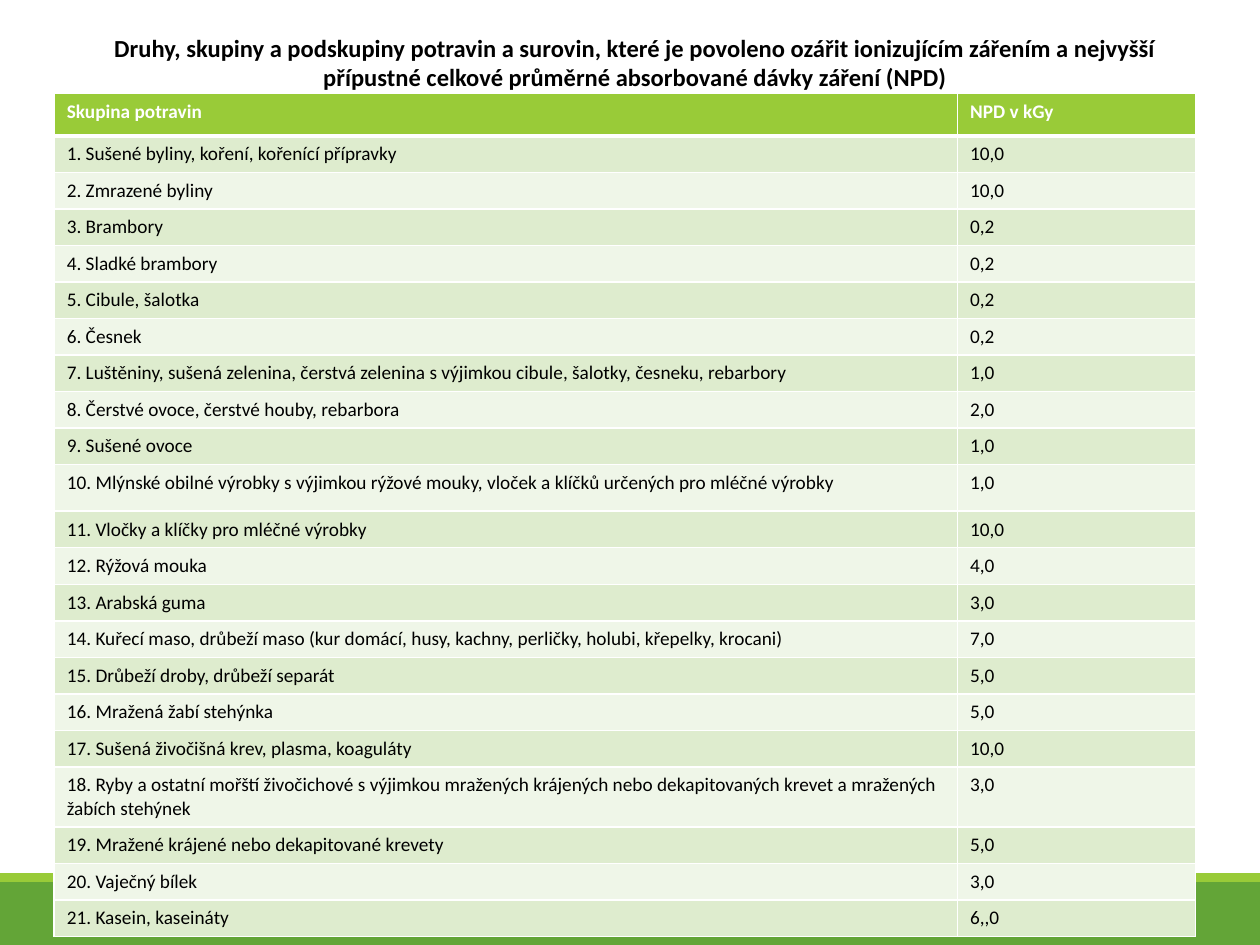
"""Build a slide listing the permitted irradiation doses for food groups."""
from lxml.etree import SubElement
from pptx import Presentation
from pptx.dml.color import RGBColor as RGB
from pptx.enum.shapes import MSO_SHAPE as SHAPE
from pptx.enum.text import MSO_ANCHOR as ANCHOR, PP_ALIGN as ALIGN
from pptx.oxml.ns import qn
from pptx.util import Inches, Pt

TITLE = ("Druhy, skupiny a podskupiny potravin a surovin, které je povoleno ozářit "
         "ionizujícím zářením a nejvyšší přípustné celkové průměrné absorbované "
         "dávky záření (NPD)")
HEADER = ("Skupina potravin", "NPD v kGy")
DOSES = [
    ("Sušené byliny, koření, kořenící přípravky", "10,0"),
    ("Zmrazené byliny", "10,0"),
    ("Brambory", "0,2"),
    ("Sladké brambory", "0,2"),
    ("Cibule, šalotka", "0,2"),
    ("Česnek", "0,2"),
    ("Luštěniny, sušená zelenina, čerstvá zelenina s výjimkou cibule, šalotky, "
     "česneku, rebarbory", "1,0"),
    ("Čerstvé ovoce, čerstvé houby, rebarbora", "2,0"),
    ("Sušené ovoce", "1,0"),
    ("Mlýnské obilné výrobky s výjimkou rýžové mouky, vloček a klíčků určených "
     "pro mléčné výrobky", "1,0"),
    ("Vločky a klíčky pro mléčné výrobky", "10,0"),
    ("Rýžová mouka", "4,0"),
    ("Arabská guma", "3,0"),
    ("Kuřecí maso, drůbeží maso (kur domácí, husy, kachny, perličky, holubi, "
     "křepelky, krocani)", "7,0"),
    ("Drůbeží droby, drůbeží separát", "5,0"),
    ("Mražená žabí stehýnka", "5,0"),
    ("Sušená živočišná krev, plasma, koaguláty", "10,0"),
    ("Ryby a ostatní mořští živočichové s výjimkou mražených krájených nebo "
     "dekapitovaných krevet a mražených žabích stehýnek", "3,0"),
    ("Mražené krájené nebo dekapitované krevety", "5,0"),
    ("Vaječný bílek", "3,0"),
    ("Kasein, kaseináty", "6,,0"),
]
COL_WIDTHS = (7.17, 1.89)
ROW_HEIGHT = 0.29
SPECIAL_HEIGHTS = {0: 0.34, 10: 0.37, 18: 0.47}
FOOTER_BANDS = [(7, 0.5, "band"), (6.93, 0.07, "accent")]
THEME = {
    "font": "Calibri", "title_size": 14, "table_size": 11,
    "band": "63A537", "accent": "99CB38", "text": "000000", "white": "FFFFFF",
    "stripes": ("EFF6E8", "DEECCE"), "rule": 1, "header_rule": 3,
}


def style(p, size, color, bold):
    f = p.font
    f.name, f.size, f.bold = THEME["font"], Pt(size), bold
    f.color.rgb = RGB.from_string(color)


def set_fill(fill, color):
    fill.solid()
    fill.fore_color.rgb = RGB.from_string(color)


def add_borders(cell, row):
    tc_pr = cell._tc.get_or_add_tcPr()
    for side in "LRTB":
        heavy = (row, side) in ((0, "B"), (1, "T"))
        width = THEME["header_rule" if heavy else "rule"]
        ln = SubElement(tc_pr, qn(f"a:ln{side}"), w=str(Pt(width)))
        SubElement(SubElement(ln, qn("a:solidFill")), qn("a:srgbClr"), val=THEME["white"])


def add_footer(s):
    for top, height, color in FOOTER_BANDS:
        sp = s.shapes.add_shape(SHAPE.RECTANGLE, 0, Inches(top), Inches(10), Inches(height))
        sp.shadow.inherit = False
        set_fill(sp.fill, THEME[color])
        sp.line.fill.background()


def add_title(s):
    sp = s.shapes.title
    sp.left, sp.top, sp.width, sp.height = map(Inches, (0.51, 0.21, 9.06, 0.57))
    tf = sp.text_frame
    tf.word_wrap, tf.vertical_anchor = True, ANCHOR.TOP
    p = tf.paragraphs[0]
    p.text, p.alignment = TITLE, ALIGN.CENTER
    style(p, THEME["title_size"], THEME["text"], True)


def add_doses(s):
    rows = [HEADER] + [(f"{n}. {name}", dose) for n, (name, dose) in enumerate(DOSES, 1)]
    heights = [SPECIAL_HEIGHTS.get(i, ROW_HEIGHT) for i in range(len(rows))]
    table = s.shapes.add_table(len(rows), len(HEADER), Inches(0.43), Inches(0.74),
                               Inches(sum(COL_WIDTHS)), Inches(sum(heights))).table
    for column, width in zip(table.columns, COL_WIDTHS):
        column.width = Inches(width)
    for i, values in enumerate(rows):
        table.rows[i].height = Inches(heights[i])
        fill = THEME["stripes"][i % 2] if i else THEME["accent"]
        color = THEME["text"] if i else THEME["white"]
        for cell, value in zip(table.rows[i].cells, values):
            add_borders(cell, i)
            set_fill(cell.fill, fill)
            p = cell.text_frame.paragraphs[0]
            p.text = value
            style(p, THEME["table_size"], color, i == 0)


def main():
    prs = Presentation()
    prs.slide_width, prs.slide_height = Inches(10), Inches(7.5)
    s = prs.slides.add_slide(prs.slide_layouts[5])
    add_footer(s)
    add_doses(s)
    add_title(s)
    prs.save("out.pptx")


if __name__ == "__main__":
    main()
